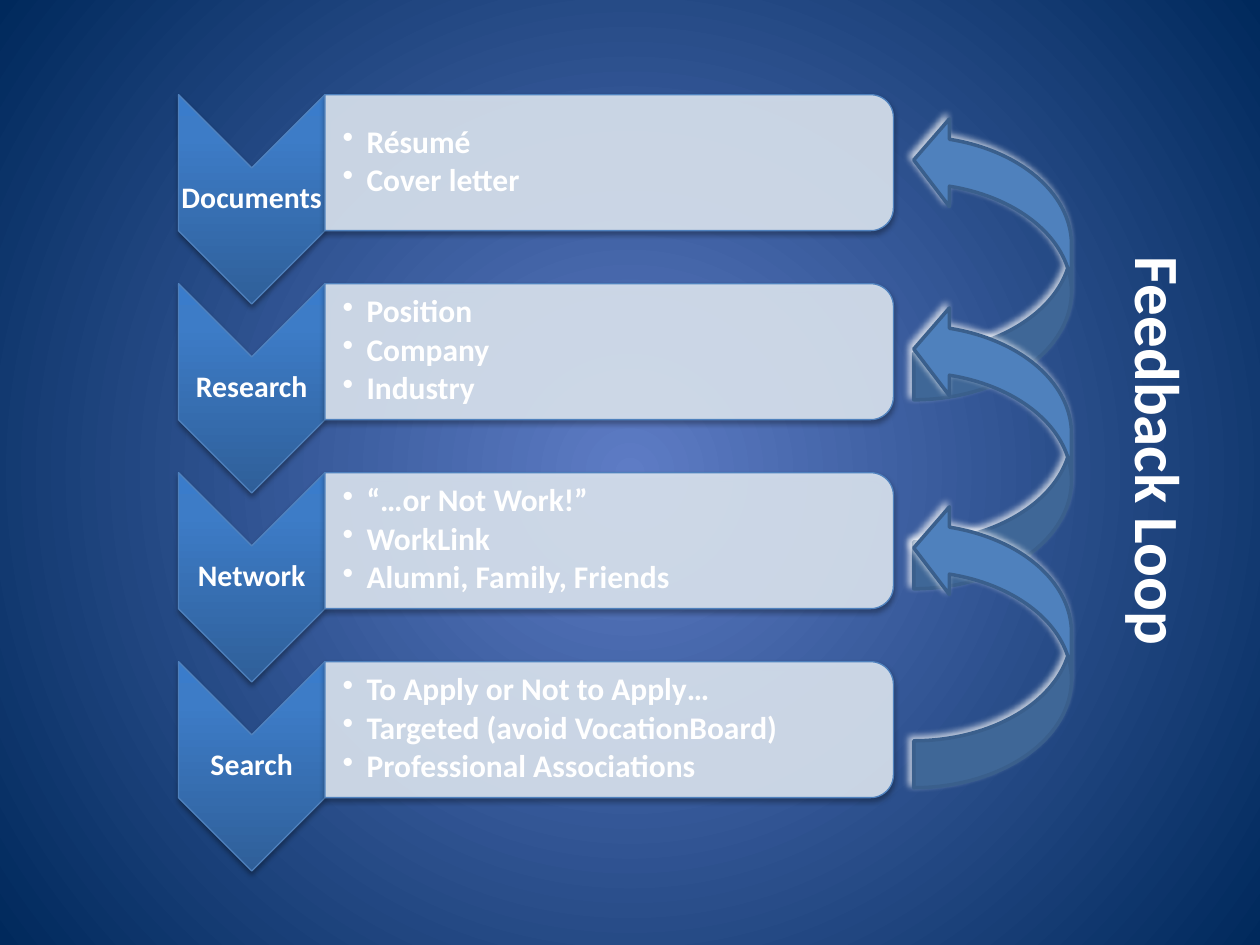
from lxml.etree import SubElement
from pptx import Presentation
from pptx.dml.color import RGBColor
from pptx.enum.shapes import MSO_SHAPE
from pptx.enum.text import MSO_ANCHOR, PP_ALIGN
from pptx.oxml.ns import qn
from pptx.util import Cm, Pt

WHITE = RGBColor(0xFF, 0xFF, 0xFF)
BLACK = RGBColor(0x00, 0x00, 0x00)
BLUE = RGBColor(0x4F, 0x81, 0xBD)
ARROW_LINE = RGBColor(0x3A, 0x5F, 0x8C)
PANEL = RGBColor(0xDC, 0xE6, 0xF2)
GLOW_CENTER = RGBColor(0x5E, 0x7C, 0xC5)
NAVY = RGBColor(0x00, 0x29, 0x5C)
CHEVRON_STOPS = [
    (0, RGBColor(0x2F, 0x5F, 0x99)),
    (80, RGBColor(0x3D, 0x7C, 0xC7)),
    (100, RGBColor(0x3A, 0x7C, 0xCB)),
]

# Shadows: colour, opacity %, blur pt, distance pt, direction in degrees
SOFT_SHADOW = (BLACK, 35, 3.1, 1.8, 90)
WHITE_SHADOW = (WHITE, 72, 4, 3, 225)

LABEL_FORMAT = {"size": Pt(17), "name": "Calibri", "bold": True}
BULLET_FORMAT = {"size": Pt(18), "name": "Calibri", "bold": True}
CAPTION_FORMAT = {"size": Pt(36), "name": "Calibri", "bold": True}

STEPS = [
    ("Documents", ["Résumé", "Cover letter"]),
    ("Research", ["Position", "Company", "Industry"]),
    ("Network", ["“…or Not Work!”", "WorkLink", "Alumni, Family, Friends"]),
    ("Search", ["To Apply or Not to Apply…", "Targeted (avoid VocationBoard)",
                "Professional Associations"]),
]
STEP_LEFT, STEP_TOP, STEP_PITCH = 3.6, 1.91, 3.81
ARROW_TOPS = [2.34, 6.15, 10.16]


def add_color(parent, color, opacity=100):
    element = SubElement(parent, qn("a:srgbClr"), val=str(color))
    if opacity < 100:
        SubElement(element, qn("a:alpha"), val=str(opacity * 1000))


def replace_with_gradient(parent, stops):
    """Swap the solid fill of parent for a gradient and return it."""
    solid = parent.find(qn("a:solidFill"))
    gradient = solid.makeelement(qn("a:gradFill"), {"rotWithShape": "0"})
    parent.replace(solid, gradient)
    stop_list = SubElement(gradient, qn("a:gsLst"))
    for position, color in stops:
        add_color(SubElement(stop_list, qn("a:gs"), pos=str(position * 1000)), color)
    return gradient


def add_shadow(shape, shadow):
    color, opacity, blur, distance, direction = shadow
    shape.shadow.inherit = False
    effects = shape._element.spPr.find(qn("a:effectLst"))
    outer = SubElement(effects, qn("a:outerShdw"), blurRad=str(Pt(blur)),
                       dist=str(Pt(distance)), dir=str(direction * 60000),
                       rotWithShape="0")
    add_color(outer, color, opacity)


def add_rotated_shape(slide, kind, box, rotation, fill, line, line_width, shadow):
    """Add a shape that covers box once it has been turned."""
    left, top, width, height = box
    if rotation == 90:
        left, top = left + (width - height) / 2, top + (height - width) / 2
        width, height = height, width
    shape = slide.shapes.add_shape(kind, Cm(left), Cm(top), Cm(width), Cm(height))
    shape.rotation = rotation
    shape.fill.solid()
    shape.fill.fore_color.rgb = fill
    shape.line.color.rgb = line
    shape.line.width = Pt(line_width)
    add_shadow(shape, shadow)
    return shape


def add_text(slide, box, lines, font_format, paragraph_format, frame_format):
    text_box = slide.shapes.add_textbox(*(Cm(length) for length in box))
    frame = text_box.text_frame
    for name, value in {"word_wrap": True, **frame_format}.items():
        setattr(frame, name, value)
    for index, line in enumerate(lines):
        paragraph = frame.add_paragraph() if index else frame.paragraphs[0]
        for name, value in paragraph_format.items():
            setattr(paragraph, name, value)
        run = paragraph.add_run()
        run.text = line
        for name, value in font_format.items():
            setattr(run.font, name, value)
        run.font.color.rgb = WHITE
    return frame


def middle_frame(left_margin):
    margins = dict.fromkeys(["margin_top", "margin_right", "margin_bottom"], Cm(0.03))
    return {"vertical_anchor": MSO_ANCHOR.MIDDLE, "margin_left": Cm(left_margin), **margins}


def add_background(slide):
    slide.background.fill.solid()
    properties = slide._element.cSld.find(qn("p:bg")).find(qn("p:bgPr"))
    gradient = replace_with_gradient(properties, [(0, GLOW_CENTER), (100, NAVY)])
    circle = SubElement(gradient, qn("a:path"), {"path": "circle"})
    SubElement(circle, qn("a:fillToRect"), dict.fromkeys("ltrb", "50000"))


def add_step(slide, left, top, label, bullets):
    # Chevron, dark at its lower tip
    chevron_width, chevron_height = 2.95, 4.22
    chevron = add_rotated_shape(
        slide, MSO_SHAPE.CHEVRON, (left, top, chevron_width, chevron_height),
        90, BLUE, BLUE, 0.75, SOFT_SHADOW)
    gradient = replace_with_gradient(chevron._element.spPr, CHEVRON_STOPS)
    SubElement(gradient, qn("a:lin"), ang=str(270 * 60000), scaled="0")
    add_text(slide, (left, top + 1.47, chevron_width, 1.27), [label], LABEL_FORMAT,
             {"alignment": PP_ALIGN.CENTER, "line_spacing": 0.9, "space_after": Pt(6)},
             middle_frame(0.03))

    # Translucent panel with bullets
    panel_left = left + chevron_width
    panel = add_rotated_shape(
        slide, MSO_SHAPE.ROUND_2_SAME_RECTANGLE, (panel_left, top, 11.46, 2.74),
        90, PANEL, BLUE, 0.75, SOFT_SHADOW)
    panel_color = panel._element.spPr.find(qn("a:solidFill"))[0]
    SubElement(panel_color, qn("a:alpha"), val="90000")
    frame = add_text(slide, (panel_left, top + 0.13, 11.3, 2.46), bullets, BULLET_FORMAT,
                     {"line_spacing": 0.9, "space_after": Pt(2.5)}, middle_frame(0.36))
    for paragraph in frame.paragraphs:
        properties = paragraph._p.get_or_add_pPr()
        properties.set("marL", str(Cm(0.48)))
        properties.set("indent", str(Cm(-0.48)))
        SubElement(properties, qn("a:buChar"), char="•")


def add_feedback_arrow(slide, left, top):
    arrow = add_rotated_shape(
        slide, MSO_SHAPE.CURVED_RIGHT_ARROW, (left, top, 3.18, 5.72),
        180, BLUE, ARROW_LINE, 2, WHITE_SHADOW)
    for index, value in enumerate([0.298, 0.556, 0.226]):
        arrow.adjustments[index] = value


def add_caption(slide, box):
    frame = add_text(slide, box, ["Feedback Loop"], CAPTION_FORMAT,
                     {"alignment": PP_ALIGN.CENTER}, {})
    frame._txBody.bodyPr.set("vert", "vert")


def main():
    presentation = Presentation()
    presentation.slide_width, presentation.slide_height = Cm(25.4), Cm(19.05)
    slide = presentation.slides.add_slide(presentation.slide_layouts[6])
    add_background(slide)
    for top in ARROW_TOPS:
        add_feedback_arrow(slide, 18.42, top)
    add_caption(slide, (22.23, 4.01, 2.06, 10.16))
    for index, (label, bullets) in enumerate(STEPS):
        add_step(slide, STEP_LEFT, STEP_TOP + index * STEP_PITCH, label, bullets)
    presentation.save("out.pptx")


if __name__ == "__main__":
    main()
